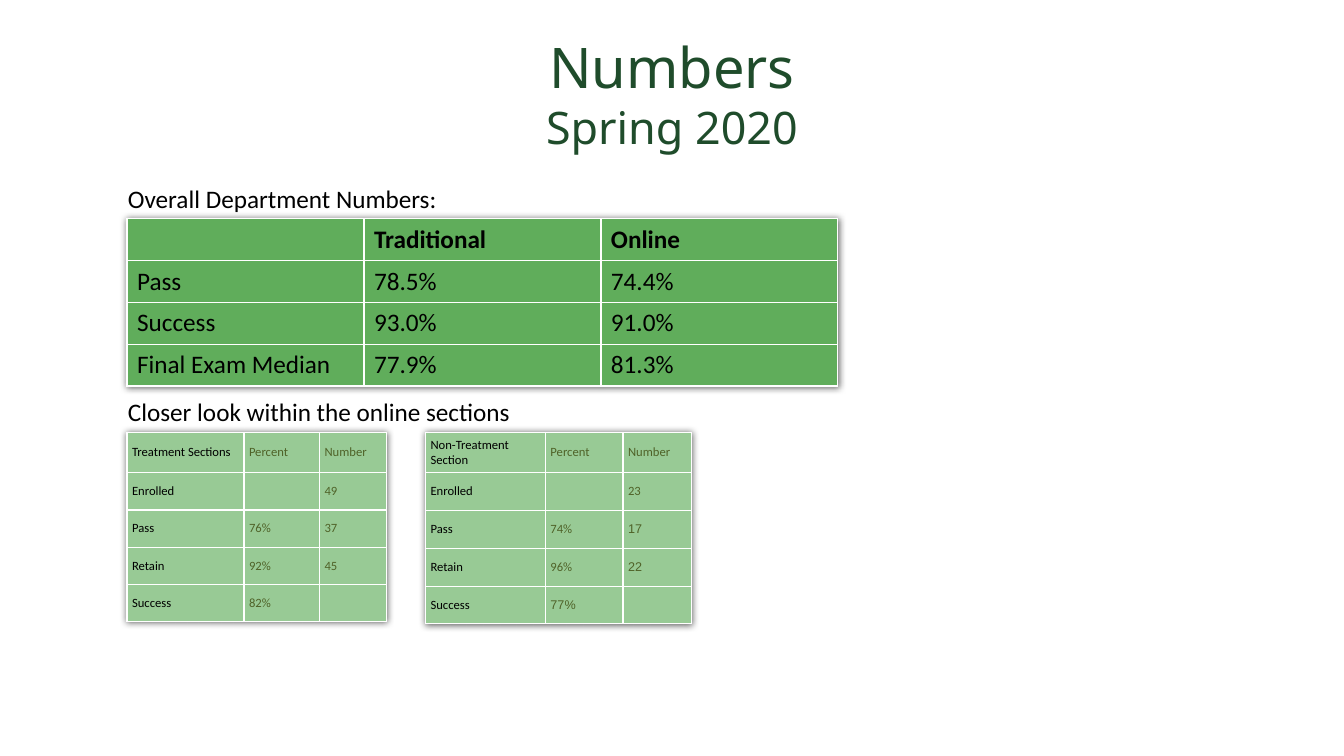
from lxml import etree
from pptx import Presentation
from pptx import util as u
from pptx.dml.color import RGBColor
from pptx.enum import text
from pptx.oxml.ns import qn

COLORS = {
    "title": "1F4C2B", "ink": "000000", "olive": "4F6228",
    "green": "60AD5B", "pale": "98CA95", "rule": "FFFFFF",
}

HEADING = [("Numbers", 40), ("Spring 2020", 32)]
CAPTIONS = [
    ("Overall Department Numbers:", 1.17, 1.77, 4.04),
    ("Closer look within the online sections", 1.17, 3.88, 4.15),
]
OVERALL = {
    "at": (1.26, 2.17), "cols": [2.35] * 3, "rows": [0.415] * 4,
    "fill": "green", "size": 18, "insets": (0.1, 0.05), "bold_head": True,
    "values": "ink", "arial": (),
    "cells": [
        ("", "Traditional", "Online"),
        ("Pass", "78.5%", "74.4%"),
        ("Success", "93.0%", "91.0%"),
        ("Final Exam Median", "77.9%", "81.3%"),
    ],
}
SECTION_STYLE = {
    "fill": "pale", "size": 9, "insets": (0.05, 0.03), "bold_head": False,
    "values": "olive",
}
TREATMENT = {
    **SECTION_STYLE, "at": (1.26, 4.29), "cols": [1.16, 0.75, 0.66],
    "rows": [0.4] + [0.37] * 4, "arial": (),
    "cells": [
        ("Treatment Sections", "Percent", "Number"),
        ("Enrolled", "", "49"),
        ("Pass", "76%", "37"),
        ("Retain", "92%", "45"),
        ("Success", "82%", ""),
    ],
}
NON_TREATMENT = {
    **SECTION_STYLE, "at": (4.22, 4.29), "cols": [1.19, 0.77, 0.68],
    "rows": [0.4] + [0.375] * 4, "arial": ("17", "22", "77%"),
    "cells": [
        ("Non-Treatment Section", "Percent", "Number"),
        ("Enrolled", "", "23"),
        ("Pass", "74%", "17"),
        ("Retain", "96%", "22"),
        ("Success", "77%", ""),
    ],
}


def add_run(paragraph, words, size, font, color, bold=False):
    run = paragraph.add_run()
    run.text = words
    run.font.size = u.Pt(size)
    run.font.name = font
    run.font.bold = bold
    run.font.color.rgb = RGBColor.from_string(COLORS[color])


def add_color(parent, color):
    fill = etree.SubElement(parent, qn("a:solidFill"))
    return etree.SubElement(fill, qn("a:srgbClr"), val=color)


def add_borders(cell):
    props = cell._tc.get_or_add_tcPr()
    for place, side in enumerate(("lnL", "lnR", "lnT", "lnB")):
        line = etree.Element(qn(f"a:{side}"), w=str(u.Pt(1)))
        add_color(line, COLORS["rule"])
        props.insert(place, line)


def add_shadow(table):
    effects = etree.Element(qn("a:effectLst"))
    shadow = etree.SubElement(
        effects, qn("a:outerShdw"), blurRad=str(u.Pt(5)), dist="0",
        algn="ctr", rotWithShape="0")
    tint = etree.SubElement(shadow, qn("a:srgbClr"), val=COLORS["ink"])
    etree.SubElement(tint, qn("a:alpha"), val="60000")
    table._tbl.tblPr.insert(0, effects)


def add_numbers(slide, numbers):
    cols, rows = numbers["cols"], numbers["rows"]
    frame = slide.shapes.add_table(
        len(rows), len(cols), *map(u.Inches, numbers["at"]),
        u.Inches(sum(cols)), u.Inches(sum(rows)))
    table = frame.table
    table.horz_banding = False
    for column, width in zip(table.columns, cols):
        column.width = u.Inches(width)
    for row, height in zip(table.rows, rows):
        row.height = u.Inches(height)
    side, top = map(u.Inches, numbers["insets"])
    for r, record in enumerate(numbers["cells"]):
        for c, words in enumerate(record):
            cell = table.cell(r, c)
            cell.margin_left = cell.margin_right = side
            cell.margin_top = cell.margin_bottom = top
            cell.vertical_anchor = text.MSO_ANCHOR.MIDDLE
            cell.fill.solid()
            cell.fill.fore_color.rgb = RGBColor.from_string(COLORS[numbers["fill"]])
            add_borders(cell)
            add_run(cell.text_frame.paragraphs[0], words, numbers["size"],
                    "Arial" if words in numbers["arial"] else "Calibri",
                    numbers["values"] if c else "ink",
                    numbers["bold_head"] and r == 0)
    add_shadow(table)


def main():
    deck = Presentation()
    deck.slide_width, deck.slide_height = u.Inches(13.33), u.Inches(7.5)
    slide = deck.slides.add_slide(deck.slide_layouts[0])
    subtitle = slide.placeholders[1].element
    subtitle.getparent().remove(subtitle)

    title = slide.shapes.title
    title.left, title.top = u.Inches(1), u.Inches(0.12)
    title.width, title.height = u.Inches(11.33), u.Inches(1.61)
    title.text_frame.vertical_anchor = text.MSO_ANCHOR.MIDDLE
    heading = title.text_frame.paragraphs[0]
    heading.alignment = text.PP_ALIGN.CENTER
    for place, (words, size) in enumerate(HEADING):
        if place:
            heading.add_line_break()
        add_run(heading, words, size, "Noto Sans", "title")

    for numbers in (OVERALL, TREATMENT, NON_TREATMENT):
        add_numbers(slide, numbers)

    for words, left, top, width in CAPTIONS:
        caption = slide.shapes.add_textbox(
            *map(u.Inches, (left, top, width, 0.4))).text_frame
        caption.word_wrap = True
        caption.auto_size = text.MSO_AUTO_SIZE.SHAPE_TO_FIT_TEXT
        add_run(caption.paragraphs[0], words, 18, "Calibri", "ink")

    deck.save("out.pptx")


if __name__ == "__main__":
    main()
